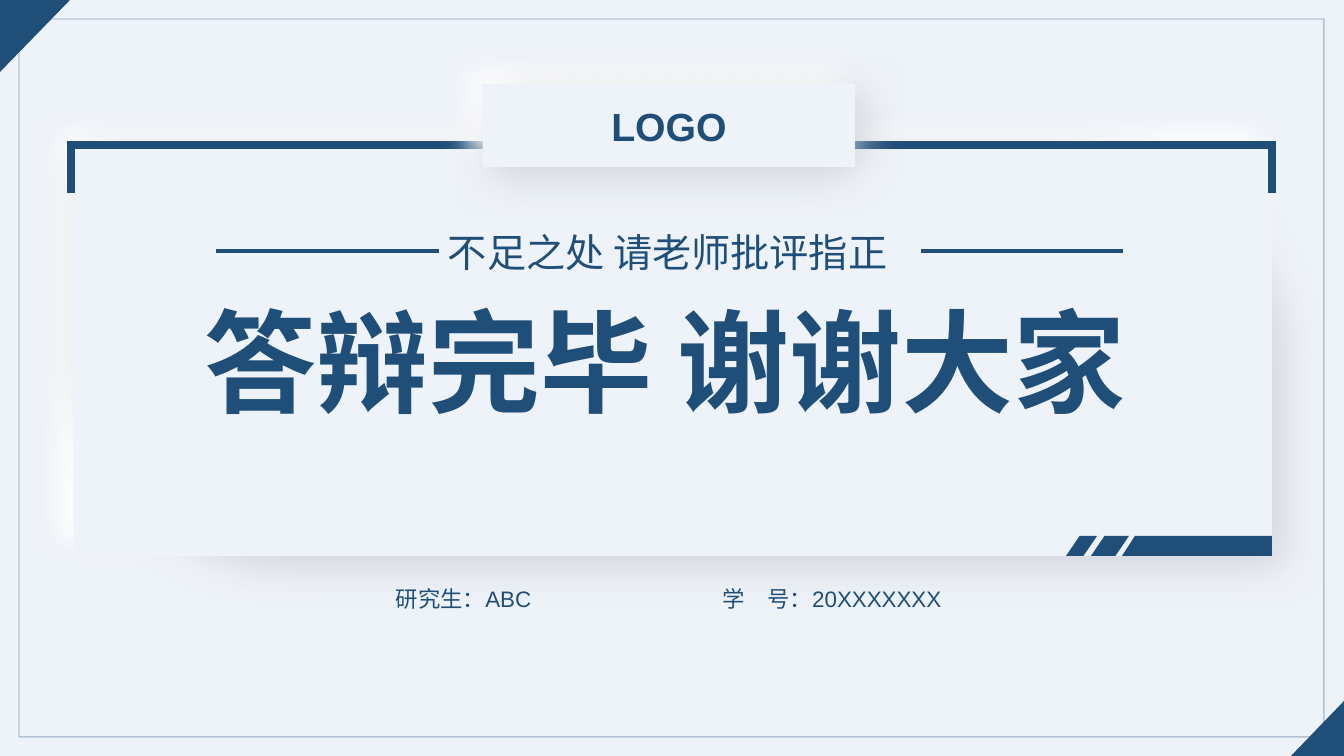
"""Build the closing slide of a thesis defence."""
from lxml.etree import SubElement
from pptx import Presentation
from pptx.dml.color import RGBColor
from pptx.enum.lang import MSO_LANGUAGE_ID
from pptx.enum.shapes import MSO_CONNECTOR, MSO_SHAPE
from pptx.enum.text import MSO_ANCHOR, MSO_AUTO_SIZE, PP_ALIGN
from pptx.oxml.ns import qn
from pptx.util import Pt

EMU_PER_PX = 12192000 / 1344
NAVY = RGBColor(0x1F, 0x4E, 0x79)
PAPER = RGBColor(0xEE, 0xF2, 0xF9)
LIGHT = RGBColor(0xFF, 0xFF, 0xFF)
SHADE = RGBColor(0xCA, 0xCE, 0xD4)
FONT = "Arial"


def px(length):
    return round(length * EMU_PER_PX)


class ClosingSlide:
    def __init__(self, presentation):
        self.slide = presentation.slides.add_slide(presentation.slide_layouts[5])
        self.shapes = self.slide.shapes
        self.slide.background.fill.solid()
        self.slide.background.fill.fore_color.rgb = PAPER

    def paint(self, shape, fill):
        shape.shadow.inherit = False
        shape.fill.solid()
        shape.fill.fore_color.rgb = fill
        shape.line.fill.background()
        return shape

    def stroke(self, shape, width):
        shape.shadow.inherit = False
        shape.fill.background()
        shape.line.color.rgb = NAVY
        shape.line.width = Pt(width)
        return shape

    def preset(self, kind, box, fill=NAVY, adjustments=(), rotation=0):
        shape = self.shapes.add_shape(kind, *map(px, box))
        for index, value in enumerate(adjustments):
            shape.adjustments[index] = value
        shape.rotation = rotation
        return self.paint(shape, fill)

    def border(self, box, width, opacity):
        frame = self.stroke(self.shapes.add_shape(MSO_SHAPE.RECTANGLE, *map(px, box)), width)
        color = frame.line._ln.find(".//" + qn("a:srgbClr"))
        SubElement(color, qn("a:alpha"), val=str(opacity * 1000))

    def outline(self, points, close):
        builder = self.shapes.build_freeform(*points[0], scale=EMU_PER_PX)
        builder.add_line_segments(points[1:], close=close)
        return builder.convert_to_shape()

    def bracket(self, points, width):
        shape = self.stroke(self.outline(points, False), width)
        SubElement(shape.line._ln, qn("a:miter"), lim="800000")

    def polygon(self, points):
        self.paint(self.outline(points, True), NAVY)

    def cast_shadow(self, shape, color, opacity, blur, distance, angle):
        effects = shape._element.spPr.find(qn("a:effectLst"))
        shadow = SubElement(effects, qn("a:outerShdw"), blurRad=str(Pt(blur)),
                            dist=str(Pt(distance)), dir=str(angle * 60000),
                            algn="ctr", rotWithShape="0")
        tint = SubElement(shadow, qn("a:srgbClr"), val=str(color))
        SubElement(tint, qn("a:alpha"), val=str(opacity * 1000))

    def raised_card(self, box, shaded_corners):
        kind = MSO_SHAPE.ROUND_2_DIAG_RECTANGLE
        self.cast_shadow(self.preset(kind, box, PAPER, (0, 0)), LIGHT, 100, 20, 15, 225)
        self.cast_shadow(self.preset(kind, box, PAPER, shaded_corners), SHADE, 80, 30, 10, 45)
        self.preset(kind, box, PAPER, (0, 0))

    def rule(self, start, end, y):
        line = self.shapes.add_connector(MSO_CONNECTOR.STRAIGHT, px(start), px(y), px(end), px(y))
        line.line.color.rgb = NAVY
        line.line.width = Pt(2.25)
        SubElement(line._element.spPr, qn("a:effectLst"))

    def set_text(self, shape, text, size, bold, wrap, align, anchor):
        frame = shape.text_frame
        frame.text = text
        frame.auto_size = MSO_AUTO_SIZE.NONE
        frame.word_wrap = wrap
        frame.vertical_anchor = anchor
        paragraph = frame.paragraphs[0]
        paragraph.alignment = align
        font = paragraph.runs[0].font
        font.name, font.size, font.bold = FONT, Pt(size), bold
        font.color.rgb = NAVY
        font.language_id = MSO_LANGUAGE_ID.SIMPLIFIED_CHINESE

    def title(self, box, text, size):
        title = self.shapes.title
        title.left, title.top, title.width, title.height = map(px, box)
        self.set_text(title, text, size, True, False, PP_ALIGN.LEFT, MSO_ANCHOR.TOP)
        title._element.getparent().append(title._element)

    def label(self, box, text, size, bold=False, wrap=False,
              align=PP_ALIGN.LEFT, anchor=MSO_ANCHOR.TOP):
        self.set_text(self.shapes.add_textbox(*map(px, box)), text, size, bold, wrap, align, anchor)


def main():
    presentation = Presentation()
    presentation.slide_width, presentation.slide_height = px(1344), px(756)
    closing = ClosingSlide(presentation)

    closing.border((19, 19, 1305, 718), 1, 27)
    closing.preset(MSO_SHAPE.ISOSCELES_TRIANGLE, (-1, 1, 72, 70), NAVY, (0,), 90)
    closing.preset(MSO_SHAPE.ISOSCELES_TRIANGLE, (1290, 702, 55, 53), NAVY, (0,), 270)
    closing.raised_card((74, 146, 1198, 410), (0, 0.5))
    closing.bracket([(71, 193), (71, 145), (1272, 145), (1272, 193)], 5.5)

    closing.title((194, 287, 957, 146), "答辩完毕 谢谢大家", 80)
    closing.label((438, 223, 467, 57), "不足之处 请老师批评指正", 28)
    closing.label((386, 580, 156, 37), "研究生：ABC", 16, wrap=True)
    closing.label((713, 580, 244, 37), "学　号：20XXXXXXX", 16)

    badge = (483, 84, 372, 83)
    closing.raised_card(badge, (0.5, 0))
    closing.label(badge, "LOGO", 28, bold=True, align=PP_ALIGN.CENTER, anchor=MSO_ANCHOR.MIDDLE)

    closing.polygon([(1135, 536), (1272, 536), (1272, 556), (1122, 556)])
    for left, width in ((1091, 38), (1066, 31)):
        closing.preset(MSO_SHAPE.PARALLELOGRAM, (left, 536, width, 20), NAVY, (0.68,))
    closing.rule(439, 216, 251)
    closing.rule(1123, 921, 251)

    presentation.save("out.pptx")


if __name__ == "__main__":
    main()
